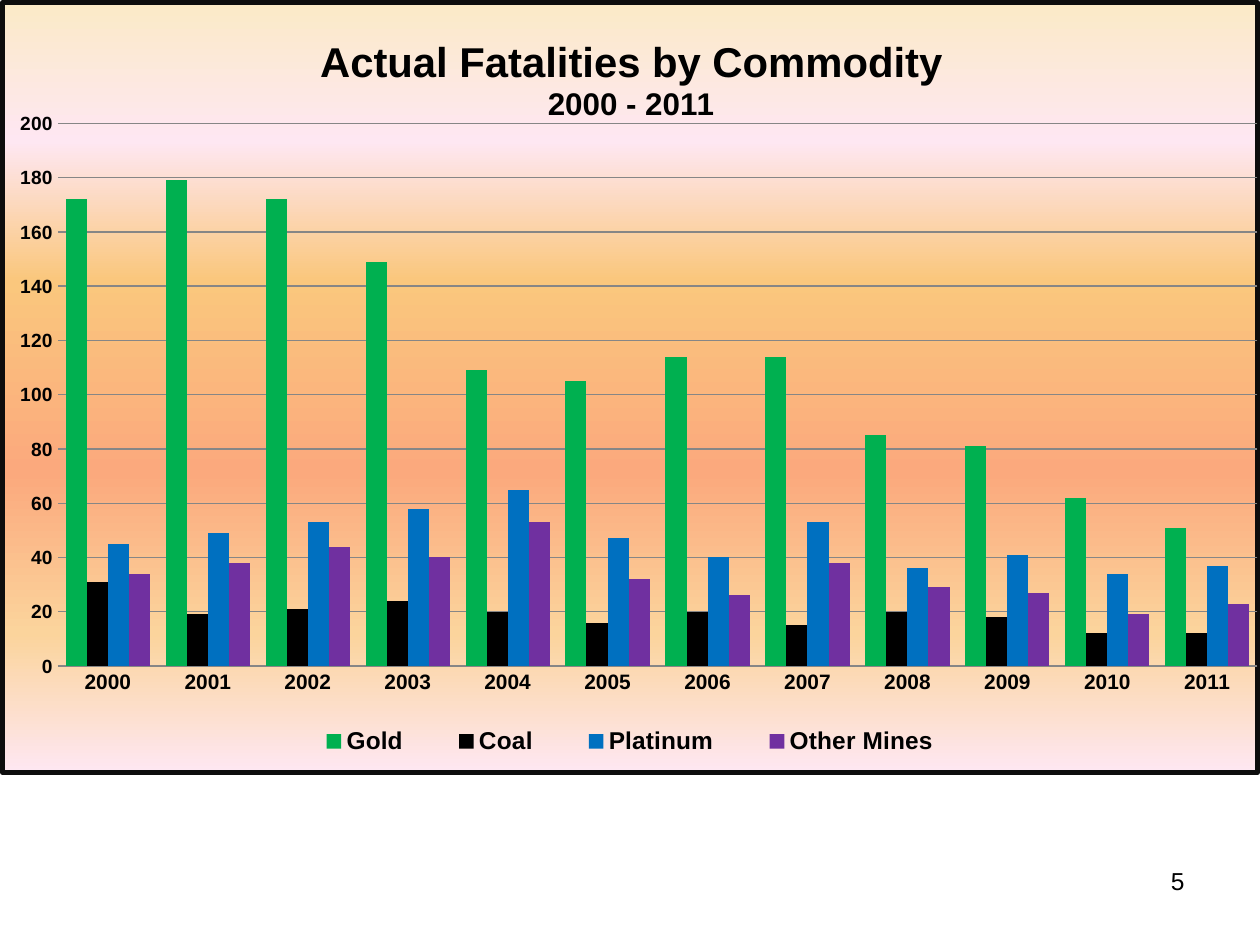
from dataclasses import dataclass

from lxml.etree import SubElement
from pptx import Presentation
from pptx.chart.data import CategoryChartData
from pptx.dml.color import RGBColor
from pptx.enum.chart import XL_CHART_TYPE, XL_LEGEND_POSITION, XL_TICK_MARK
from pptx.enum.text import PP_ALIGN
from pptx.oxml import parse_xml
from pptx.oxml.ns import nsdecls, qn
from pptx.util import Inches, Pt


@dataclass(frozen=True)
class Theme:
    font: str = "Arial"
    ink: str = "000000"
    grid: str = "868686"
    frame: str = "0D0D0D"
    title: int = 24
    subtitle: int = 18
    body: int = 14
    category: int = 12
    value: int = 11
    base: int = 10
    # Backdrop gradient: position in percent, colour
    backdrop: tuple = ((0, "FBEAC7"), (18, "FEE7F2"), (36, "FAC77D"),
                       (61, "FBA97D"), (82, "FBD49C"), (100, "FEE7F2"))


THEME = Theme()
WIDTH, HEIGHT = Inches(10), Inches(7.5)

YEARS = [str(year) for year in range(2000, 2012)]
FATALITIES = {
    "Gold": ("00B050", (172, 179, 172, 149, 109, 105, 114, 114, 85, 81, 62, 51)),
    "Coal": ("000000", (31, 19, 21, 24, 20, 16, 20, 15, 20, 18, 12, 12)),
    "Platinum": ("0070C0", (45, 49, 53, 58, 65, 47, 40, 53, 36, 41, 34, 37)),
    "Other Mines": ("7030A0", (34, 38, 44, 40, 53, 32, 26, 38, 29, 27, 19, 23)),
}


def style_font(font, size, bold=False):
    font.name = THEME.font
    font.size = Pt(size)
    font.bold = bold
    font.color.rgb = RGBColor.from_string(THEME.ink)


def write_text(paragraph, text, *, size, bold=False, align=None):
    paragraph.alignment = align
    run = paragraph.add_run()
    run.text = text
    style_font(run.font, size, bold)


def share_box(left, top, width, height):
    """Turn shares of the slide into lengths."""
    return (int(left * WIDTH), int(top * HEIGHT),
            int(width * WIDTH), int(height * HEIGHT))


def set_layout(part, index, **settings):
    """Place a chart part by shares of the chart area."""
    for layout in part.findall(qn("c:layout")):
        part.remove(layout)
    layout = parse_xml(f"<c:layout {nsdecls('c')}/>")
    manual = SubElement(layout, qn("c:manualLayout"))
    for key, value in settings.items():
        SubElement(manual, qn(f"c:{key}")).set("val", str(value))
    part.insert(index, layout)


def fill_backdrop(chart):
    stops = "".join(
        f'<a:gs pos="{position * 1000}"><a:srgbClr val="{color}"/></a:gs>'
        for position, color in THEME.backdrop)
    backdrop = parse_xml(
        f'<c:spPr {nsdecls("c", "a")}>'
        f'<a:gradFill><a:gsLst>{stops}</a:gsLst><a:lin ang="5400000" scaled="0"/></a:gradFill>'
        f'<a:ln w="{Pt(3)}"><a:solidFill><a:srgbClr val="{THEME.frame}"/></a:solidFill></a:ln>'
        "</c:spPr>")
    chart.element.find(qn("c:chart")).addnext(backdrop)


def style_axes(chart):
    years, deaths = chart.category_axis, chart.value_axis
    for axis, size in ((years, THEME.category), (deaths, THEME.value)):
        axis.major_tick_mark = axis.minor_tick_mark = XL_TICK_MARK.NONE
        style_font(axis.tick_labels.font, size, bold=True)
    deaths.minimum_scale, deaths.maximum_scale, deaths.major_unit = 0, 200, 20
    deaths.format.line.fill.background()
    for line in (years.format.line, deaths.major_gridlines.format.line):
        line.color.rgb = RGBColor.from_string(THEME.grid)
        line.width = Pt(0.75)


def add_fatalities_chart(slide, box):
    data = CategoryChartData()
    data.categories = YEARS
    for commodity, (_, deaths) in FATALITIES.items():
        data.add_series(commodity, deaths)
    chart = slide.shapes.add_chart(XL_CHART_TYPE.COLUMN_CLUSTERED, *box, data).chart
    style_font(chart.font, THEME.base)
    fill_backdrop(chart)

    # Two-line heading
    heading = chart.chart_title.text_frame
    write_text(heading.paragraphs[0], "Actual Fatalities by Commodity",
               size=THEME.title, bold=True)
    write_text(heading.add_paragraph(), "2000 - 2011", size=THEME.subtitle, bold=True)
    chart.chart_title.include_in_layout = False
    set_layout(chart.chart_title._element, 1, xMode="edge", yMode="edge", x=0.25, y=0.04)

    # Columns
    plot = chart.plots[0]
    plot.gap_width = 75
    plot.vary_by_categories = False
    for series, (color, _) in zip(plot.series, FATALITIES.values()):
        series.invert_if_negative = False
        series.format.fill.solid()
        series.format.fill.fore_color.rgb = RGBColor.from_string(color)
    style_axes(chart)
    set_layout(chart.element.find(".//" + qn("c:plotArea")), 0, layoutTarget="inner",
               xMode="edge", yMode="edge", x=0.044, y=0.157, w=0.956, h=0.705)

    # Legend
    chart.has_legend = True
    chart.legend.position = XL_LEGEND_POSITION.BOTTOM
    chart.legend.include_in_layout = False
    style_font(chart.legend.font, THEME.body, bold=True)
    set_layout(chart.legend._element, 1, xMode="edge", yMode="edge",
               x=0.22, y=0.93, w=0.56, h=0.06)


def add_page_number(slide, box, number):
    frame = slide.shapes.add_textbox(*box).text_frame
    frame.word_wrap = True
    write_text(frame.paragraphs[0], number, size=THEME.body, align=PP_ALIGN.RIGHT)


def main():
    deck = Presentation()
    deck.slide_width, deck.slide_height = WIDTH, HEIGHT
    slide = deck.slides.add_slide(deck.slide_layouts[6])
    add_page_number(slide, share_box(0.72, 0.91, 0.23, 0.07), "5")
    add_fatalities_chart(slide, share_box(0, 0, 1, 0.82))
    deck.save("out.pptx")


if __name__ == "__main__":
    main()
